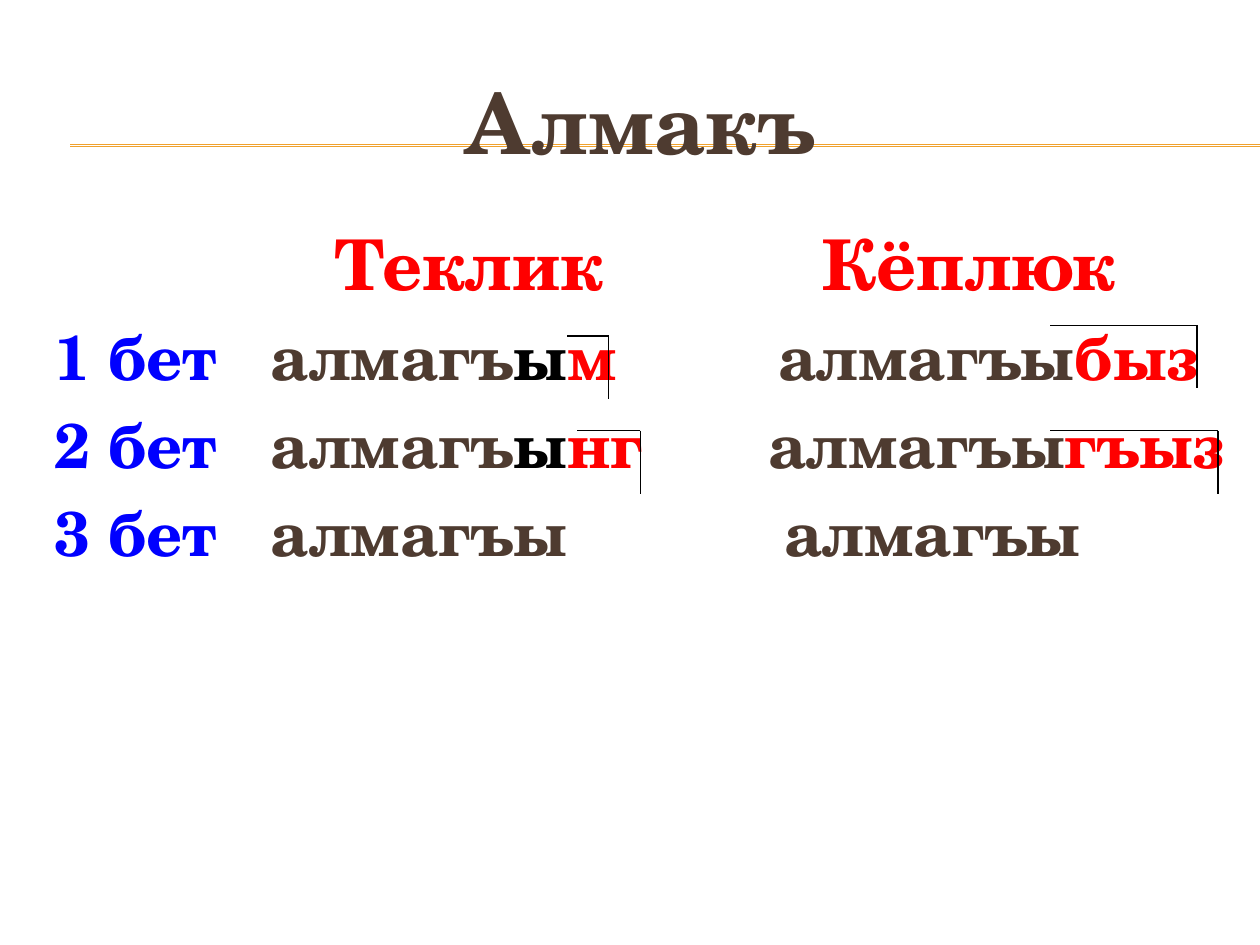
"""Builds a slide on the singular and plural possessive forms of a verb."""
from dataclasses import dataclass

from lxml import etree
from pptx import Presentation
from pptx.dml.color import RGBColor
from pptx.enum.shapes import MSO_CONNECTOR
from pptx.enum.text import MSO_ANCHOR, PP_ALIGN
from pptx.oxml.ns import qn
from pptx.util import Cm, Pt

STRAIGHT = MSO_CONNECTOR.STRAIGHT
MIDDLE, TOP = MSO_ANCHOR.MIDDLE, MSO_ANCHOR.TOP
CENTER, LEFT = PP_ALIGN.CENTER, PP_ALIGN.LEFT

FONT = "TeX Gyre Schola"
BROWN = RGBColor(0x4E, 0x3B, 0x30)
RED = RGBColor(0xFF, 0x00, 0x00)
BLUE = RGBColor(0x00, 0x00, 0xFF)
BLACK = RGBColor(0x00, 0x00, 0x00)
ORANGE = RGBColor(0xF0, 0xA2, 0x2E)

SLIDE_W, SLIDE_H = 25.4, 19.05
TEXT_LEFT, TEXT_W = 0.84, 24.13
BRACKET_DROP = 1.27


@dataclass
class Row:
    size: float
    tabs: tuple[float, ...]
    runs: tuple[tuple[str, RGBColor], ...]


@dataclass
class Bracket:
    left: float
    right: float
    top: float


ROWS = (
    Row(40, (5.66, 15.5), (("\tТеклик\tКёплюк", RED),)),
    Row(36, (4.37, 14.6), (("1 бет\t", BLUE), ("алмагъ", BROWN), ("ы", BLACK),
                           ("м\t", RED), ("алмагъы", BROWN), ("быз", RED))),
    Row(36, (4.37, 14.4), (("2 бет\t", BLUE), ("алмагъ", BROWN), ("ы", BLACK),
                           ("нг\t", RED), ("алмагъы", BROWN), ("гъыз", RED))),
    Row(36, (4.37, 14.72), (("3 бет\t", BLUE), ("алмагъы\tалмагъы", BROWN))),
)

BRACKETS = (
    Bracket(11.43, 12.27, 6.77),
    Bracket(21.17, 24.13, 6.56),
    Bracket(11.64, 12.91, 8.68),
    Bracket(21.17, 24.55, 8.68),
)


def add_run(p, text: str, *, size: float, color: RGBColor) -> None:
    r = p.add_run()
    r.text = text
    r.font.name = FONT
    r.font.size = Pt(size)
    r.font.bold = True
    r.font.color.rgb = color


def add_line(shapes, x1: float, y1: float, x2: float, y2: float, *,
             color: RGBColor, width: float) -> None:
    line = shapes.add_connector(STRAIGHT, Cm(x1), Cm(y1), Cm(x2), Cm(y2))
    line.line.color.rgb = color
    line.line.width = Pt(width)
    etree.SubElement(line._element.spPr, qn("a:effectLst"))


def add_bracket(shapes, b: Bracket) -> None:
    add_line(shapes, b.left, b.top, b.right, b.top, color=BLACK, width=0.79)
    add_line(shapes, b.right, b.top, b.right, b.top + BRACKET_DROP, color=BLACK, width=0.79)


def set_tabs(p, stops: tuple[float, ...]) -> None:
    tabs = etree.SubElement(p._p.get_or_add_pPr(), qn("a:tabLst"))
    for stop in stops:
        etree.SubElement(tabs, qn("a:tab"), pos=str(int(Cm(stop))), algn="l")


def add_forms(shapes, rows: tuple[Row, ...]) -> None:
    sp = shapes.add_textbox(Cm(TEXT_LEFT), Cm(4.32), Cm(TEXT_W), Cm(12.57))
    tf = sp.text_frame
    tf.word_wrap = True
    tf.vertical_anchor = TOP
    for i, row in enumerate(rows):
        p = tf.add_paragraph() if i else tf.paragraphs[0]
        p.alignment = LEFT
        p.space_before = Pt(row.size * 0.2)
        set_tabs(p, row.tabs)
        for text, color in row.runs:
            add_run(p, text, size=row.size, color=color)


def add_title(shapes, text: str) -> None:
    sp = shapes.title
    sp.left, sp.top, sp.width, sp.height = Cm(TEXT_LEFT), Cm(1.27), Cm(TEXT_W), Cm(2.34)
    tf = sp.text_frame
    tf.vertical_anchor = MIDDLE
    p = tf.paragraphs[0]
    p.alignment = CENTER
    add_run(p, text, size=48, color=BROWN)
    shapes._spTree.append(sp._element)


def main() -> None:
    prs = Presentation()
    prs.slide_width, prs.slide_height = Cm(SLIDE_W), Cm(SLIDE_H)
    shapes = prs.slides.add_slide(prs.slide_layouts[5]).shapes
    for y in (2.92, 2.95):
        add_line(shapes, 1.42, y, SLIDE_W, y, color=ORANGE, width=0.75)
    add_title(shapes, "Алмакъ")
    add_forms(shapes, ROWS)
    for bracket in BRACKETS:
        add_bracket(shapes, bracket)
    prs.save("out.pptx")


if __name__ == "__main__":
    main()
